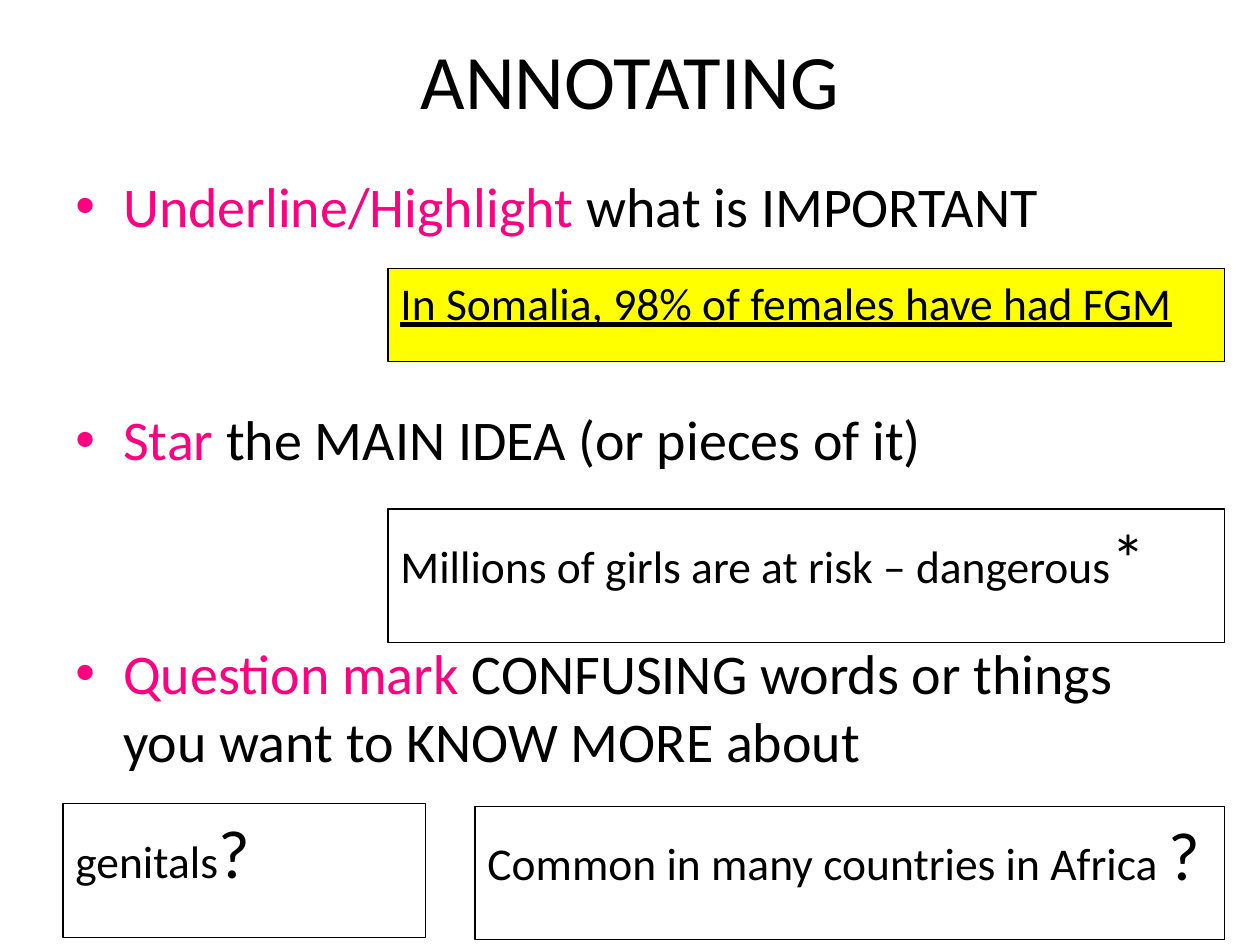
from dataclasses import dataclass

from lxml import etree
from pptx import Presentation, util as u
from pptx.dml import color as col
from pptx.enum import shapes, text
from pptx.oxml import ns


@dataclass(frozen=True)
class Theme:
    face: str = "Calibri"
    ink: str = "000000"
    pink: str = "FF0080"
    mark: str = "FFFF00"
    title: int = 44
    body: int = 32
    note: int = 26
    sign: int = 39
    gap: float = 95.2
    edge: float = 0.75


class Deck:
    def __init__(self, theme):
        self.theme = theme
        self.prs = Presentation()
        self.prs.slide_width = u.Inches(10)
        self.prs.slide_height = u.Inches(7.5)
        self.slide = self.prs.slides.add_slide(self.prs.slide_layouts[6])

    def phrase(self, para, words, size, tint=None, **form):
        run = para.add_run()
        run.text = words
        form = {"name": self.theme.face, "size": u.Pt(size), **form}
        for key, val in form.items():
            setattr(run.font, key, val)
        run.font.color.rgb = col.RGBColor.from_string(tint or self.theme.ink)

    def frame(self, box):
        area = self.slide.shapes.add_textbox(*map(u.Inches, box))
        area.text_frame.word_wrap = True
        return area.text_frame

    def title(self, box, words):
        frame = self.frame(box)
        frame.vertical_anchor = text.MSO_ANCHOR.MIDDLE
        para = frame.paragraphs[0]
        para.alignment = text.PP_ALIGN.CENTER
        self.phrase(para, words, self.theme.title)

    def bullet(self, para):
        props = para._p.get_or_add_pPr()
        indent = u.Inches(0.38)
        for key, val in {"marL": indent, "indent": -indent}.items():
            props.set(key, str(int(val)))
        tint = etree.SubElement(props, ns.qn("a:buClr"))
        etree.SubElement(tint, ns.qn("a:srgbClr"), val=self.theme.pink)
        etree.SubElement(props, ns.qn("a:buFont"), typeface="Arial")
        etree.SubElement(props, ns.qn("a:buChar"), char="•")

    def steps(self, box, items):
        frame = self.frame(box)
        for num, (lead, rest) in enumerate(items):
            para = frame.add_paragraph() if num else frame.paragraphs[0]
            para.space_before = u.Pt(self.theme.gap if num else 0)
            self.bullet(para)
            self.phrase(para, lead, self.theme.body, self.theme.pink)
            self.phrase(para, rest, self.theme.body)

    def note(self, box, words, sign="", fill=None, **form):
        rect = self.slide.shapes.add_shape(
            shapes.MSO_SHAPE.RECTANGLE, *map(u.Inches, box))
        rect.shadow.inherit = False
        if fill:
            rect.fill.solid()
            rect.fill.fore_color.rgb = col.RGBColor.from_string(fill)
        else:
            rect.fill.background()
        rect.line.color.rgb = col.RGBColor.from_string(self.theme.ink)
        rect.line.width = u.Pt(self.theme.edge)
        frame = rect.text_frame
        frame.word_wrap = True
        frame.vertical_anchor = text.MSO_ANCHOR.TOP
        para = frame.paragraphs[0]
        para.alignment = text.PP_ALIGN.LEFT
        self.phrase(para, words, self.theme.note, **form)
        if sign:
            self.phrase(para, sign, self.theme.sign)


def main():
    theme = Theme()
    deck = Deck(theme)
    left, right, wide, tall = 0.5, 9.72, 6.64, 1.06
    deck.title((left, 0, 9, 1.25), "ANNOTATING")
    deck.steps((left, 1.31, 9, 5.46), [
        ("Underline/Highlight ", "what is IMPORTANT"),
        ("Star", " the MAIN IDEA (or pieces of it)"),
        ("Question mark ",
         "CONFUSING words or things you want to KNOW MORE about"),
    ])
    deck.note((right - wide, 2.13, wide, 0.74),
              "In Somalia, 98% of females have had FGM",
              fill=theme.mark, underline=True)
    deck.note((right - wide, 4.04, wide, tall),
              "Millions of girls are at risk – dangerous", "*")
    deck.note((right - 5.95, 6.4, 5.95, tall),
              "Common in many countries in Africa ", "?")
    deck.note((left, 6.38, 2.88, tall), "genitals", "?")
    deck.prs.save("out.pptx")


if __name__ == "__main__":
    main()
